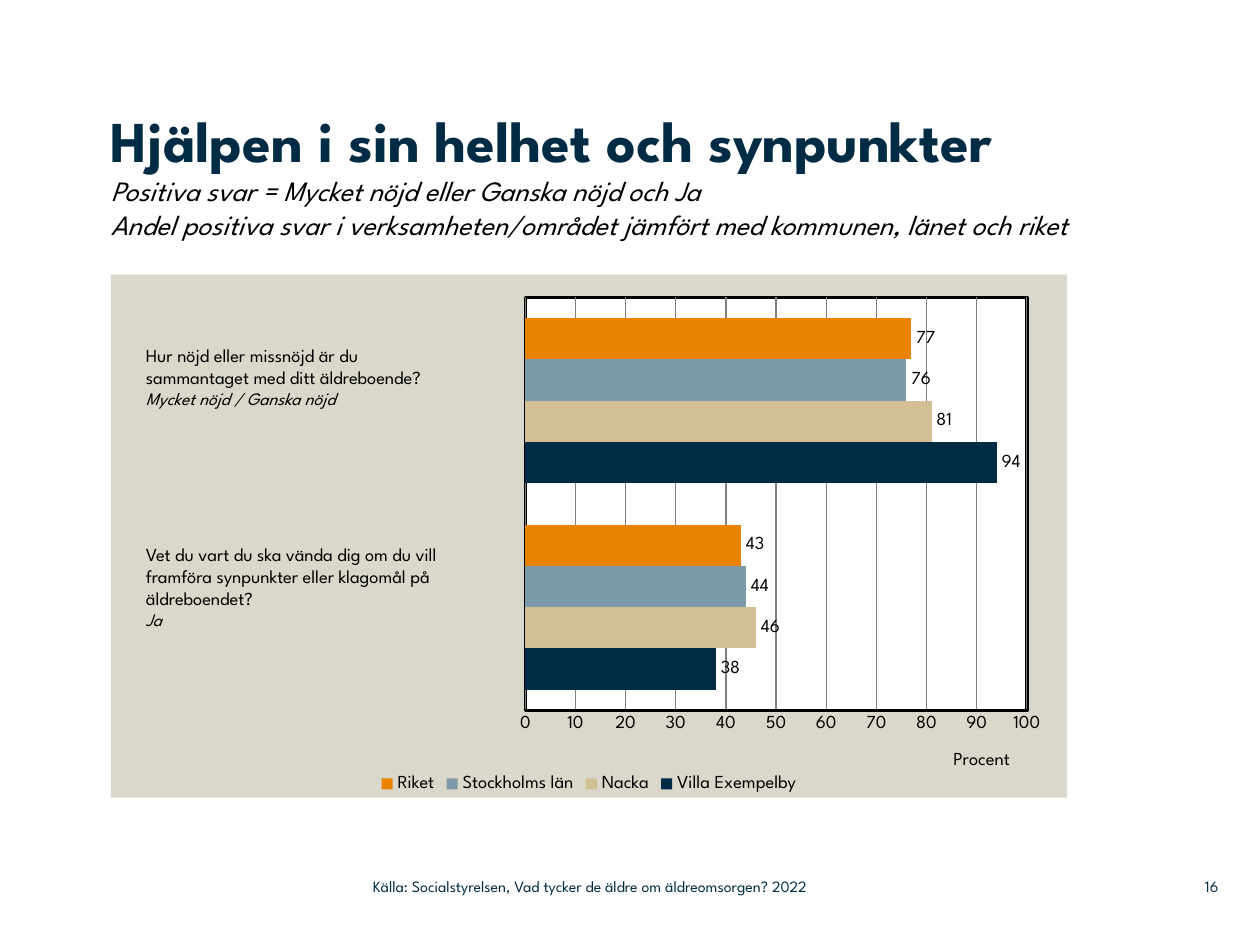
from typing import NamedTuple

from lxml import etree
from pptx import Presentation
from pptx.chart.data import CategoryChartData
from pptx.dml.color import RGBColor
from pptx.enum import chart as ch, text as tx
from pptx.oxml import parse_xml
from pptx.oxml.ns import nsdecls, qn
from pptx.util import Inches, Pt

FONT = "League Spartan"
NAVY, BLACK, GREY = "002B45", "000000", "808080"
WIDE, HIGH = 10, 7.5
COLS, ROWS = 100, 75


class Box(NamedTuple):
    col: float
    row: float
    cols: float = 0
    rows: float = 0

    def place(self) -> tuple:
        across, down = WIDE / COLS, HIGH / ROWS
        return (Inches(self.col * across), Inches(self.row * down),
                Inches(self.cols * across), Inches(self.rows * down))

    def within(self, outer: "Box") -> "Box":
        return Box((self.col - outer.col) / outer.cols, (self.row - outer.row) / outer.rows,
                   self.cols / outer.cols, self.rows / outer.rows)


class Run(NamedTuple):
    words: str
    size: float
    color: str = BLACK
    bold: bool = False
    slant: bool = False


class Bar(NamedTuple):
    name: str
    vals: tuple
    color: str


def hue(code: str) -> RGBColor:
    return RGBColor.from_string(code)


def style(font, size: float, color: str = BLACK, bold: bool = False, slant: bool = False) -> None:
    font.name, font.size, font.bold, font.italic = FONT, Pt(size), bold, slant
    font.color.rgb = hue(color)


def write(slide, box: Box, paras: list, pad: bool = False,
          anchor=tx.MSO_ANCHOR.TOP, align=tx.PP_ALIGN.LEFT) -> None:
    frame = slide.shapes.add_textbox(*box.place()).text_frame
    frame.word_wrap, frame.vertical_anchor = True, anchor
    if not pad:
        frame.margin_left = frame.margin_right = frame.margin_top = frame.margin_bottom = 0
    for i, runs in enumerate(paras):
        para = frame.paragraphs[0] if i == 0 else frame.add_paragraph()
        para.alignment = align
        for item in runs:
            for j, line in enumerate(item.words.split("\n")):
                if j:
                    para.add_line_break()
                if line:
                    run = para.add_run()
                    run.text = line
                    style(run.font, *item[1:])


def layout(node, after, share: Box) -> None:
    for old in node.findall(qn("c:layout")):
        node.remove(old)
    rules = [("xMode", "edge"), ("yMode", "edge"), ("x", share.col), ("y", share.row)]
    if share.cols:
        rules = [("layoutTarget", "inner")] + rules + [("w", share.cols), ("h", share.rows)]
    top = etree.Element(qn("c:layout"))
    inner = etree.SubElement(top, qn("c:manualLayout"))
    for tag, val in rules:
        etree.SubElement(inner, qn("c:" + tag)).set("val", str(val))
    if after is None:
        node.insert(0, top)
    else:
        after.addnext(top)


def paint(fill: str, line: str = "", width: float = 0):
    solid = '<a:solidFill><a:srgbClr val="{}"/></a:solidFill>'
    edge = solid.format(line) if line else "<a:noFill/>"
    return parse_xml(f'<c:spPr {nsdecls("c", "a")}>{solid.format(fill)}'
                     f'<a:ln w="{Pt(width)}">{edge}</a:ln></c:spPr>')


def graph(slide, box: Box, inner: Box, unit: Box, bars: list) -> None:
    data = CategoryChartData()
    data.categories = ["1", "2"]
    for bar in bars:
        data.add_series(bar.name, bar.vals)
    chart = slide.shapes.add_chart(ch.XL_CHART_TYPE.BAR_CLUSTERED, *box.place(), data).chart
    style(chart.font, 10.5)
    chart.has_title = False
    chart.has_legend = True
    chart.legend.position = ch.XL_LEGEND_POSITION.BOTTOM
    chart.legend.include_in_layout = False
    style(chart.legend.font, 10.5)

    plot = chart.plots[0]
    plot.gap_width, plot.overlap, plot.vary_by_categories = 100, 0, False
    for bar, row in zip(bars, plot.series):
        row.format.fill.solid()
        row.format.fill.fore_color.rgb = hue(bar.color)
        tags = row.data_labels
        tags.show_value, tags.position = True, ch.XL_LABEL_POSITION.OUTSIDE_END
        style(tags.font, 10.5)

    chart.category_axis.visible = False
    axis = chart.value_axis
    axis.minimum_scale, axis.maximum_scale, axis.major_unit = 0, 100, 10
    axis.major_tick_mark = axis.minor_tick_mark = ch.XL_TICK_MARK.NONE
    axis.format.line.color.rgb = hue(BLACK)
    axis.format.line.width = Pt(2)
    axis.has_major_gridlines = True
    axis.major_gridlines.format.line.color.rgb = hue(GREY)
    axis.major_gridlines.format.line.width = Pt(0.75)
    style(axis.tick_labels.font, 10.5)
    run = axis.axis_title.text_frame.paragraphs[0].add_run()
    run.text = "Procent"
    style(run.font, 10.5)

    root = chart.element
    title = root.find(".//" + qn("c:valAx")).find(qn("c:title"))
    layout(title, title.find(qn("c:tx")), unit.within(box))
    area = root.find(".//" + qn("c:plotArea"))
    layout(area, None, inner.within(box))
    area.append(paint("FFFFFF", BLACK, 2))
    root.find(qn("c:chart")).addnext(paint("DAD7CB"))


def main() -> None:
    deck = Presentation()
    deck.slide_width, deck.slide_height = Inches(WIDE), Inches(HIGH)
    slide = deck.slides.add_slide(deck.slide_layouts[6])
    left, ask, foot = 8.8, 10.6, 68.9

    write(slide, Box(left, 8.3, 77.9, 13.4), [[
        Run("Hjälpen i sin helhet och synpunkter\n", 33, NAVY, True),
        Run("Positiva svar = Mycket nöjd eller Ganska nöjd och Ja\n"
            "Andel positiva svar i verksamheten/området jämfört med kommunen, länet och riket",
            16, slant=True)]])
    graph(slide, Box(left, 21.8, 75.9, 41.5), Box(41.7, 23.6, 39.8, 32.8), Box(75.4, 59.3), [
        Bar("Villa Exempelby", (38, 94), NAVY),
        Bar("Nacka", (46, 81), "D3BF96"),
        Bar("Stockholms län", (44, 76), "7D9AAA"),
        Bar("Riket", (43, 77), "E98300")])

    asks = [
        (26.8, ["Hur nöjd eller missnöjd är du", "sammantaget med ditt äldreboende?"],
         "Mycket nöjd / Ganska nöjd"),
        (42.6, ["Vet du vart du ska vända dig om du vill framföra synpunkter "
                "eller klagomål på äldreboendet?"], "Ja")]
    for row, lines, reply in asks:
        write(slide, Box(ask, row, 30.5, 8.1),
              [[Run(line, 10.5)] for line in lines] + [[Run(reply, 10, slant=True)]], pad=True)

    feet = [
        (29.6, 44.3, "Källa: Socialstyrelsen, Vad tycker de äldre om äldreomsorgen? 2022",
         tx.PP_ALIGN.LEFT),
        (92, 4.7, "16", tx.PP_ALIGN.RIGHT)]
    for col, cols, words, align in feet:
        write(slide, Box(col, foot, cols, 2.9), [[Run(words, 9, NAVY)]],
              anchor=tx.MSO_ANCHOR.MIDDLE, align=align)
    deck.save("out.pptx")


if __name__ == "__main__":
    main()
